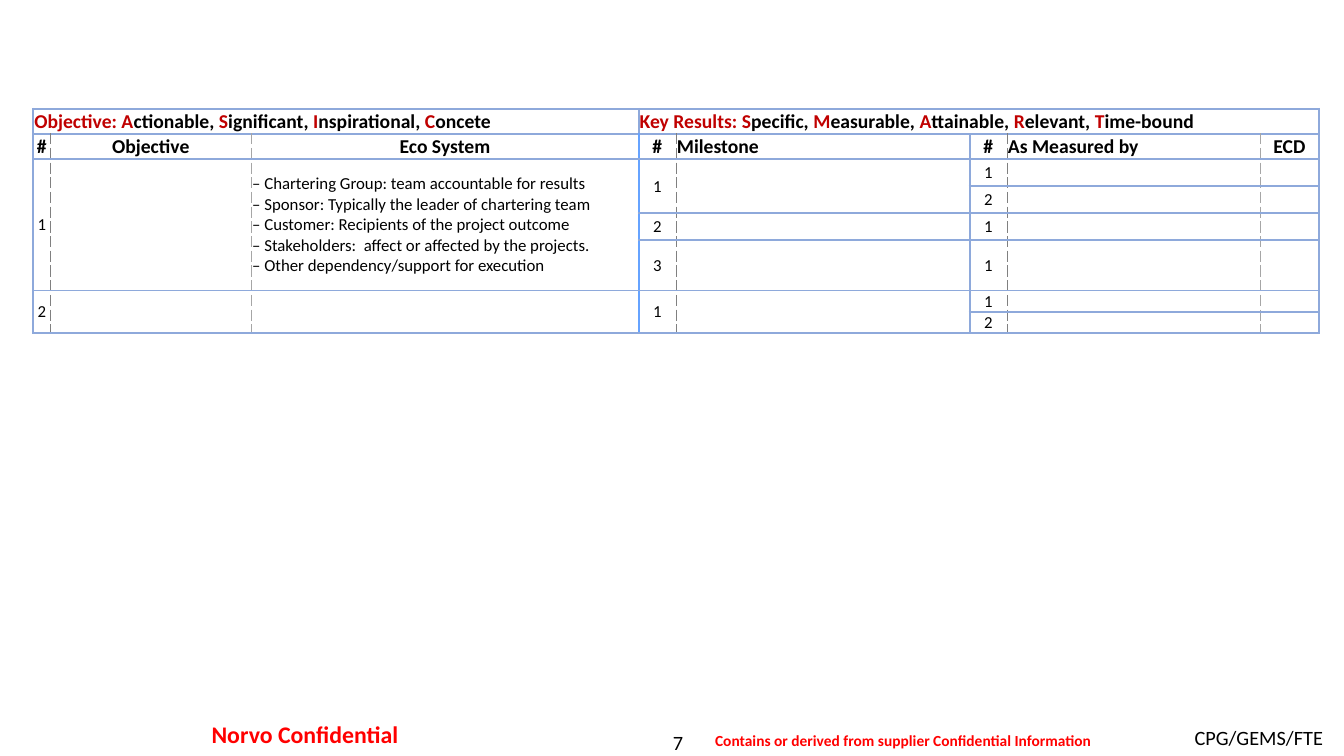
from lxml.etree import SubElement
from pptx import Presentation
from pptx.dml.color import RGBColor
from pptx.enum.text import MSO_ANCHOR, PP_ALIGN
from pptx.oxml.ns import qn
from pptx.util import Inches, Pt

BLUE = ("8EA9DB", 1.5, "solid")
BRIGHT = ("66A3FF", 1.5, "solid")
DARK_DASH = ("808080", 0.5, "sysDash")
GREY_DASH = ("A6A6A6", 0.5, "dash")
COLUMN_EDGES = [BLUE, DARK_DASH, GREY_DASH, BRIGHT, DARK_DASH, BLUE, DARK_DASH, GREY_DASH, BLUE]
COLUMN_WIDTHS = [0.17, 1.99, 3.84, 0.37, 2.91, 0.37, 2.51, 0.58]
ROW_HEIGHTS = [0.25, 0.24, 0.27, 0.27, 0.27, 0.5, 0.2, 0.21]
MERGES = [(0, 0, 0, 2), (0, 3, 0, 7)]
MERGES += [(2, column, 5, column) for column in range(3)]
MERGES += [(2, column, 3, column) for column in (3, 4)]
MERGES += [(6, column, 7, column) for column in range(5)]

TITLES = {
    0: ["Objective: A", "ctionable, ", "S", "ignificant, ", "I", "nspirational, ", "C", "oncete"],
    3: ["Key Results: S", "pecific, ", "M", "easurable, ", "A", "ttainable, ",
        "R", "elevant, ", "T", "ime-bound"],
}
HEADINGS = ["#", "Objective", "Eco System", "#", "Milestone", "#", "As Measured by", "ECD"]
NUMBERS = {
    0: {2: "1", 6: "2"},
    3: {2: "1", 4: "2", 5: "3", 6: "1"},
    5: {2: "1", 3: "2", 4: "1", 5: "1", 6: "1", 7: "2"},
}
ECO_SYSTEM = [
    "– Chartering Group: team accountable for results",
    "– Sponsor: Typically the leader of chartering team",
    "– Customer: Recipients of the project outcome",
    "– Stakeholders:  affect or affected by the projects.",
    "– Other dependency/support for execution",
]
FOOTERS = [
    ("7", 5.56, 7.24, 2.33, 0.24, 0, 0, 14.5, "000000", False, PP_ALIGN.CENTER),
    ("CPG/GEMS/FTE", 8.83, 7.15, 4.39, 0.35, 0.1, 0.05, 14.5, "000000", False, PP_ALIGN.RIGHT),
    ("Norvo Confidential", 1.55, 7.08, 2.95, 0.41, 0.12, 0.06, 17, "FF0000", True, PP_ALIGN.CENTER),
    ("Contains or derived from supplier Confidential Information",
     6.92, 7.19, 4.08, 0.31, 0.12, 0.06, 11, "FF0000", True, PP_ALIGN.CENTER),
]


def rgb(value):
    return RGBColor.from_string(value)


def add_span(para, text, size, color="000000", bold=False):
    span = para.add_run()
    span.text = text
    span.font.name = "Calibri"
    span.font.size = Pt(size)
    span.font.bold = bold
    span.font.color.rgb = rgb(color)


def set_edge(properties, side, edge):
    color, width, dash = edge
    line = SubElement(properties, qn(f"a:ln{side}"), w=str(Pt(width)))
    fill = SubElement(line, qn("a:solidFill"))
    SubElement(fill, qn("a:srgbClr"), val=color)
    SubElement(line, qn("a:prstDash"), val=dash)


def format_cell(cell, row, column):
    cell.vertical_anchor = MSO_ANCHOR.MIDDLE
    cell.margin_left = cell.margin_right = cell.margin_top = Inches(0.01)
    cell.margin_bottom = 0
    properties = cell._tc.get_or_add_tcPr()
    if not cell.is_spanned:
        end = column + cell.span_width if cell.is_merge_origin else column + 1
        left, right = (BLUE, BLUE) if row == 0 else (COLUMN_EDGES[column], COLUMN_EDGES[end])
        for side, edge in zip("LRTB", (left, right, BLUE, BLUE)):
            set_edge(properties, side, edge)
    cell.fill.background()


def fill_cell(cell, row, column):
    para = cell.text_frame.paragraphs[0]
    if row == 0 and column in TITLES:
        for index, text in enumerate(TITLES[column]):
            add_span(para, text, 14, "000000" if index % 2 else "C00000", True)
    elif row == 1:
        para.alignment = PP_ALIGN.LEFT if column in (4, 6) else PP_ALIGN.CENTER
        add_span(para, HEADINGS[column], 14, bold=True)
    elif row in NUMBERS.get(column, {}):
        para.alignment = PP_ALIGN.CENTER
        add_span(para, NUMBERS[column][row], 12)
    elif (row, column) == (2, 2):
        for index, text in enumerate(ECO_SYSTEM):
            if index:
                para.add_line_break()
            add_span(para, text, 12)
        for line_break in para._p.findall(qn("a:br")):
            SubElement(line_break, qn("a:rPr"), sz="1200")
    else:
        SubElement(para._p, qn("a:endParaRPr"), sz="1000")


def add_objectives_table(page, left, top, width, height):
    frame = page.shapes.add_table(len(ROW_HEIGHTS), len(COLUMN_WIDTHS),
                                  Inches(left), Inches(top), Inches(width), Inches(height))
    table = frame.table
    table.first_row = table.horz_banding = False
    style = table._tbl.tblPr.find(qn("a:tableStyleId"))
    style.text = "{2D5ABB26-0587-4C30-8999-92F81FD0307C}"
    for column, size in zip(table.columns, COLUMN_WIDTHS):
        column.width = Inches(size * width / sum(COLUMN_WIDTHS))
    for row, size in zip(table.rows, ROW_HEIGHTS):
        row.height = Inches(size * height / sum(ROW_HEIGHTS))
    for first_row, first_column, last_row, last_column in MERGES:
        table.cell(first_row, first_column).merge(table.cell(last_row, last_column))
    for row in range(len(ROW_HEIGHTS)):
        for column in range(len(COLUMN_WIDTHS)):
            cell = table.cell(row, column)
            format_cell(cell, row, column)
            fill_cell(cell, row, column)


def add_footer(page, text, left, top, width, height, side, edge, size, color, bold, alignment):
    box = page.shapes.add_textbox(Inches(left), Inches(top), Inches(width), Inches(height))
    frame = box.text_frame
    frame.word_wrap = True
    frame.margin_left = frame.margin_right = Inches(side)
    frame.margin_top = frame.margin_bottom = Inches(edge)
    para = frame.paragraphs[0]
    para.alignment = alignment
    add_span(para, text, size, color, bold)


def main():
    deck = Presentation()
    deck.slide_width = Inches(13.33)
    deck.slide_height = Inches(7.5)
    page = deck.slides.add_slide(deck.slide_layouts[6])
    for footer in FOOTERS:
        add_footer(page, *footer)
    add_objectives_table(page, 0.33, 1.08, 12.75, 2.21)
    deck.save("out.pptx")


if __name__ == "__main__":
    main()
